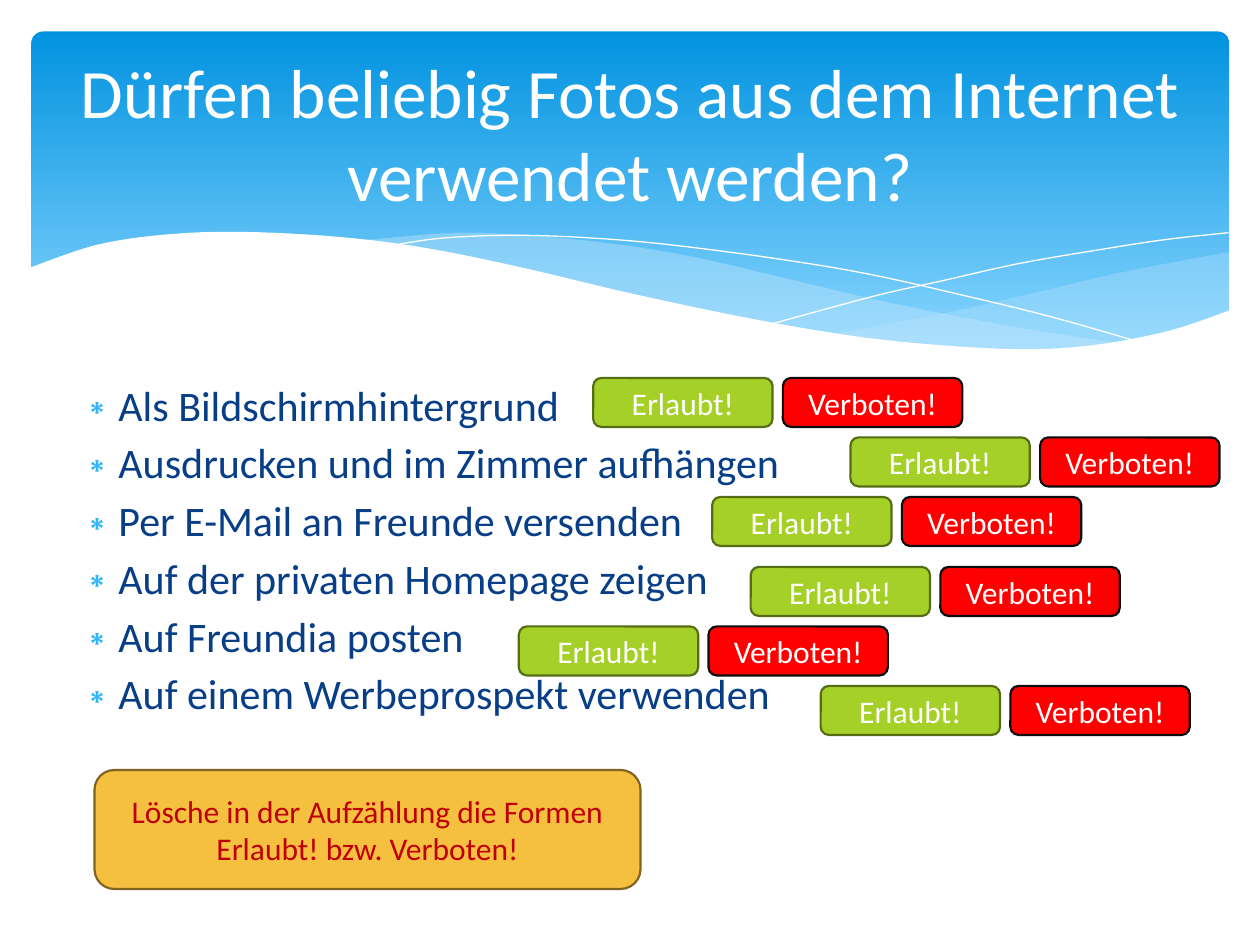
from dataclasses import dataclass

import lxml.etree
import pptx
import pptx.dml.color
import pptx.enum.dml
import pptx.enum.shapes
import pptx.enum.text
import pptx.oxml.ns
import pptx.util

Pt = pptx.util.Pt
qn = pptx.oxml.ns.qn
Align = pptx.enum.text.PP_ALIGN
Anchor = pptx.enum.text.MSO_ANCHOR
Point = tuple[float, float]


@dataclass(frozen=True)
class Theme:
    font: str = "Calibri"
    title_size: float = 39.6
    body_size: float = 24
    label_size: float = 18
    line_width: float = 1.25
    white: str = "FFFFFF"
    sky_top: str = "0293E0"
    sky_bottom: str = "83D3FE"
    mist: str = "C6E7FC"
    text: str = "073E87"
    bullet: str = "31B6FD"


@dataclass(frozen=True)
class Style:
    fill: str
    line: str
    text: str


@dataclass(frozen=True)
class Label:
    text: str
    left: float
    top: float
    width: float
    height: float
    style: Style


@dataclass(frozen=True)
class Question:
    text: str
    label_left: float
    label_top: float


THEME = Theme()
ALLOWED = Style("A5D028", "566D15", THEME.white)
FORBIDDEN = Style("FF0000", "0D0D0D", THEME.white)
HINT = Style("F5C040", "806421", "C00000")
LABEL_WIDTH, LABEL_HEIGHT, LABEL_STEP = 102.5, 28, 108.4

QUESTIONS = [
    Question("Als Bildschirmhintergrund", 339, 216),
    Question("Ausdrucken und im Zimmer aufhängen", 486, 250),
    Question("Per E-Mail an Freunde versenden", 407, 284),
    Question("Auf der privaten Homepage zeigen", 429, 324),
    Question("Auf Freundia posten", 296.5, 358),
    Question("Auf einem Werbeprospekt verwenden", 469, 392),
]

RIGHT_TOP = [(702.5, 144), (641.5, 155.5), (599, 165.5), (542, 178.5), (476, 191)]
RIGHT_BOTTOM = [(476, 191), (517.5, 196), (553.5, 199.5), (586, 200), (621.5, 198),
                (651.5, 193.5), (678, 186.5), (702.5, 178)]
MIDDLE_TOP = [(643, 196.5), (581, 187), (508.5, 173), (453, 160), (399.5, 147.5),
              (352, 139.5), (302.5, 134.5), (260, 133), (206, 137.5)]
MIDDLE_BOTTOM = [(206, 137.5), (260.5, 146), (323.5, 160), (381.5, 173), (445, 186),
                 (500.5, 194.5), (548, 199.5), (589, 200), (643, 196.5)]
FALLING_LINE = [(222.5, 140.5), (254, 136), (299.5, 134.5), (352, 137), (400.5, 142),
                (458, 150), (500.5, 157.5), (547, 168), (598.5, 180.5), (653, 196)]
RISING_LINE = [(441.5, 185), (500.5, 169), (538.5, 160.5), (580.5, 151),
               (623.5, 143.5), (665.5, 137), (702, 133)]
FRONT_TOP = [(17, 153), (55, 140), (95, 134), (139, 132.5), (195, 135.5), (245, 142),
             (301, 153.5), (362, 168), (434, 183), (495, 193), (548, 198),
             (592, 199.5), (630, 196.5), (670, 188.5), (703.5, 177)]


def color(code: str) -> pptx.dml.color.RGBColor:
    return pptx.dml.color.RGBColor.from_string(code)


def smooth_curve(knots: list[Point], steps: int = 6) -> list[Point]:
    padded = [knots[0], *knots, knots[-1]]
    points = [knots[0]]
    for a, b, c, d in zip(padded, padded[1:], padded[2:], padded[3:]):
        for step in range(1, steps + 1):
            t = step / steps
            points.append(tuple(
                q + t * (r - p) / 2 + t**2 * (2 * p - 5 * q + 4 * r - s) / 2
                + t**3 * (3 * q - p - 3 * r + s) / 2
                for p, q, r, s in zip(a, b, c, d)))
    return points


def draw_outline(page, points: list[Point], fill: str = "", opacity: int = 100):
    corners = [(Pt(x), Pt(y)) for x, y in points]
    builder = page.shapes.build_freeform(*corners[0], scale=1.0)
    builder.add_line_segments(corners[1:], close=bool(fill))
    shape = builder.convert_to_shape()
    shape.shadow.inherit = False
    if not fill:
        shape.fill.background()
        shape.line.color.rgb = color(THEME.white)
        shape.line.width = Pt(0)
        return
    shape.fill.solid()
    shape.fill.fore_color.rgb = color(fill)
    if opacity < 100:
        tint = next(shape.element.spPr.iter(qn("a:srgbClr")))
        lxml.etree.SubElement(tint, qn("a:alpha"), val=str(opacity * 1000))
    shape.line.fill.background()


def write(para, text: str, *, size: float, ink: str, align=Align.LEFT):
    para.alignment = align
    span = para.add_run()
    span.text = text
    span.font.name = THEME.font
    span.font.size = Pt(size)
    span.font.color.rgb = color(ink)


def add_bullet(para, indent: float = 21.6):
    properties = para._p.get_or_add_pPr()
    properties.set("marL", str(Pt(indent)))
    properties.set("indent", str(-Pt(indent)))
    tint = lxml.etree.SubElement(properties, qn("a:buClr"))
    lxml.etree.SubElement(tint, qn("a:srgbClr"), val=THEME.bullet)
    lxml.etree.SubElement(properties, qn("a:buChar"), char="∗")


def place(shape, left: float, top: float, width: float, height: float):
    shape.left, shape.top = Pt(left), Pt(top)
    shape.width, shape.height = Pt(width), Pt(height)


def add_rounded(page, left: float, top: float, width: float, height: float):
    shape = page.shapes.add_shape(
        pptx.enum.shapes.MSO_SHAPE.ROUNDED_RECTANGLE,
        Pt(left), Pt(top), Pt(width), Pt(height))
    shape.shadow.inherit = False
    return shape


def draw_label(page, label: Label):
    box = add_rounded(page, label.left, label.top, label.width, label.height)
    box.fill.solid()
    box.fill.fore_color.rgb = color(label.style.fill)
    box.line.color.rgb = color(label.style.line)
    box.line.width = Pt(THEME.line_width)
    frame = box.text_frame
    frame.word_wrap = True
    frame.vertical_anchor = Anchor.MIDDLE
    write(frame.paragraphs[0], label.text, size=THEME.label_size,
          ink=label.style.text, align=Align.CENTER)


def draw_header(page):
    sky = add_rounded(page, 18, 18, 684.5, 194.5)
    sky.adjustments[0] = 0.034
    sky.line.fill.background()
    sky.fill.gradient()
    sky.fill.gradient_angle = 270
    shades = [(0, THEME.sky_top), (0.9, THEME.sky_bottom)]
    for stop, (position, shade) in zip(sky.fill.gradient_stops, shades):
        stop.position = position
        stop.color.rgb = color(shade)
    draw_outline(page, smooth_curve(RIGHT_TOP) + smooth_curve(RIGHT_BOTTOM), THEME.mist, 29)
    draw_outline(page, smooth_curve(MIDDLE_TOP) + smooth_curve(MIDDLE_BOTTOM), THEME.mist, 40)
    for knots in (FALLING_LINE, RISING_LINE):
        draw_outline(page, smooth_curve(knots))
    draw_outline(page, smooth_curve(FRONT_TOP) + [(703.5, 237), (17, 237)], THEME.white)


def fill_placeholders(page):
    title, body = page.shapes.title, page.placeholders[1]
    place(title, 36, 26.5, 648, 98.5)
    place(body, 36.5, 213, 583, 271.5)
    for holder, anchor in ((body, Anchor.TOP), (title, Anchor.MIDDLE)):
        holder.text_frame.auto_size = pptx.enum.text.MSO_AUTO_SIZE.NONE
        holder.text_frame.vertical_anchor = anchor
        page.shapes.element.append(holder.element)
    write(title.text_frame.paragraphs[0],
          "Dürfen beliebig Fotos aus dem Internet verwendet werden?",
          size=THEME.title_size, ink=THEME.white, align=Align.CENTER)
    frame = body.text_frame
    for index, question in enumerate(QUESTIONS):
        para = frame.add_paragraph() if index else frame.paragraphs[0]
        add_bullet(para)
        para.space_before = Pt(4.2 if index else 0)
        write(para, question.text, size=THEME.body_size, ink=THEME.text)


def main():
    deck = pptx.Presentation()
    deck.slide_width, deck.slide_height = Pt(720), Pt(540)
    page = deck.slides.add_slide(deck.slide_layouts[1])
    draw_header(page)
    fill_placeholders(page)
    for question in QUESTIONS:
        for column, (text, style) in enumerate((("Erlaubt!", ALLOWED), ("Verboten!", FORBIDDEN))):
            draw_label(page, Label(text, question.label_left + column * LABEL_STEP,
                                   question.label_top, LABEL_WIDTH, LABEL_HEIGHT, style))
    draw_label(page, Label("Lösche in der Aufzählung die Formen Erlaubt! bzw. Verboten!",
                           54, 440, 312, 68, HINT))
    deck.save("out.pptx")


if __name__ == "__main__":
    main()
